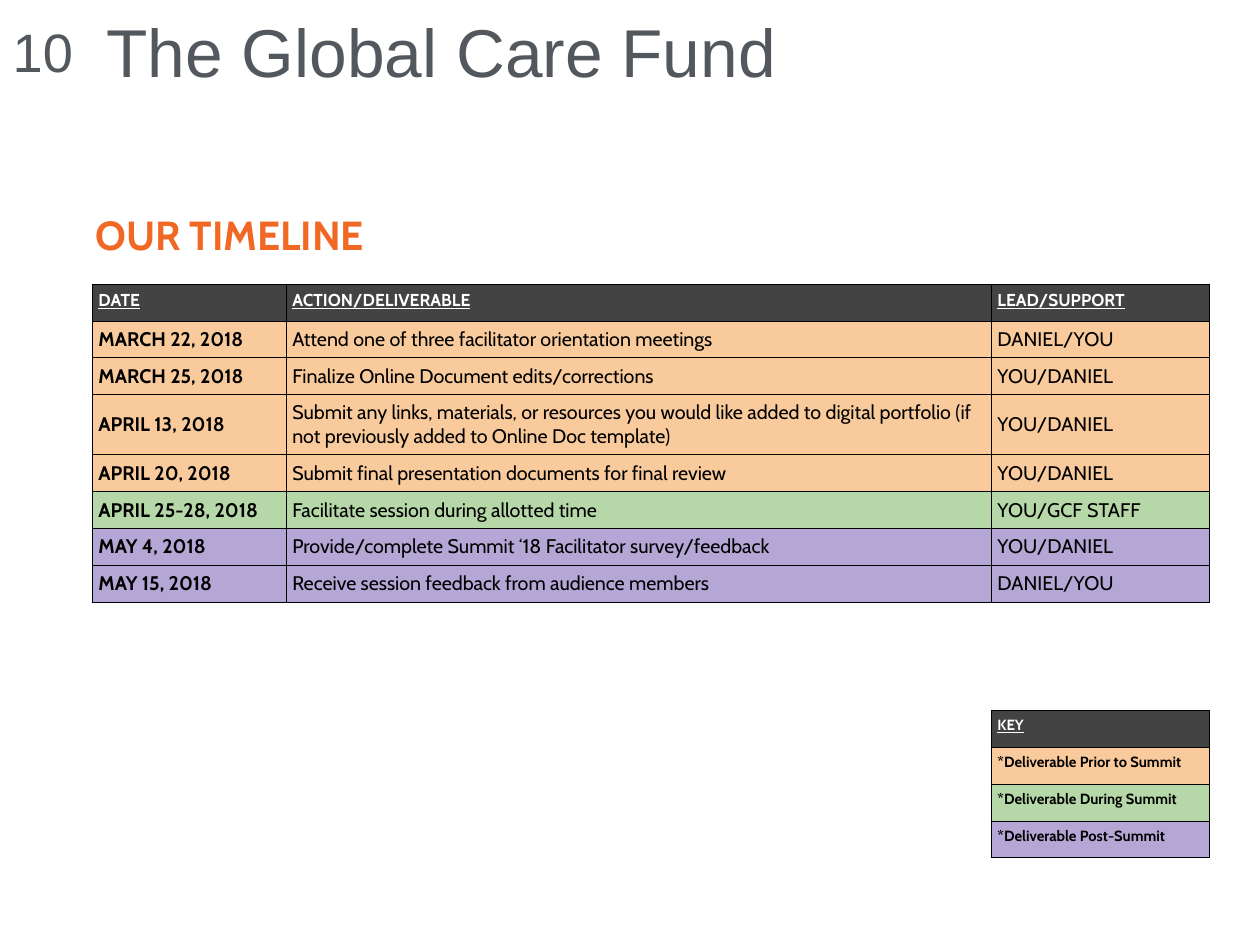
from lxml import etree
from pptx import Presentation
from pptx.dml.color import RGBColor
from pptx.enum.text import MSO_ANCHOR, MSO_AUTO_SIZE, PP_ALIGN
from pptx.oxml.ns import qn
from pptx.util import Inches, Pt

TOP, MIDDLE = MSO_ANCHOR.TOP, MSO_ANCHOR.MIDDLE
LEFT = PP_ALIGN.LEFT
NO_AUTOFIT = MSO_AUTO_SIZE.NONE
TITLE_ONLY_LAYOUT = 5

WHITE = RGBColor(0xFF, 0xFF, 0xFF)
BLACK = RGBColor(0x00, 0x00, 0x00)
SLATE = RGBColor(0x53, 0x58, 0x5F)
ORANGE = RGBColor(0xF1, 0x68, 0x24)
HEADER = RGBColor(0x43, 0x43, 0x43)
BEFORE = RGBColor(0xF9, 0xCB, 0x9C)
DURING = RGBColor(0xB6, 0xD7, 0xA8)
AFTER = RGBColor(0xB4, 0xA7, 0xD6)

# Grid measures: 24 columns and 24 rows to the inch
GRID_STEP = Inches(1) / 24
TABLE_ROW = 10
TIMELINE_LEFT = 25
TIMELINE_COLUMNS = (52.5, 191, 59)

TIMELINE_HEADINGS = ("DATE", "ACTION/DELIVERABLE", "LEAD/SUPPORT")
TIMELINE = (
    (BEFORE, "MARCH 22, 2018",
     "Attend one of three facilitator orientation meetings", "DANIEL/YOU"),
    (BEFORE, "MARCH 25, 2018",
     "Finalize Online Document edits/corrections", "YOU/DANIEL"),
    (BEFORE, "APRIL 13, 2018",
     "Submit any links, materials, or resources you would like added to "
     "digital portfolio (if not previously added to Online Doc template)",
     "YOU/DANIEL"),
    (BEFORE, "APRIL 20, 2018",
     "Submit final presentation documents for final review", "YOU/DANIEL"),
    (DURING, "APRIL 25-28, 2018",
     "Facilitate session during allotted time", "YOU/GCF STAFF"),
    (AFTER, "MAY 4, 2018",
     "Provide/complete Summit ‘18 Facilitator survey/feedback", "YOU/DANIEL"),
    (AFTER, "MAY 15, 2018",
     "Receive session feedback from audience members", "DANIEL/YOU"),
)
KEY = (
    (BEFORE, "*Deliverable Prior to Summit"),
    (DURING, "*Deliverable During Summit"),
    (AFTER, "*Deliverable Post-Summit"),
)


def grid(steps):
    """Turn a number of grid steps into a length."""
    return round(steps * GRID_STEP)


class SlideBuilder:
    display_font = "Arial"
    text_font = "Cabin"
    cell_margin = Inches(0.07)
    border_width = Pt(1)

    def __init__(self, slide):
        self.slide = slide

    def add_text(self, frame, text, size, color, font, bold=False,
                 underline=False):
        """Add one formatted run to the first paragraph and return that paragraph."""
        paragraph = frame.paragraphs[0]
        paragraph.alignment = LEFT
        run = paragraph.add_run()
        run.text = text
        run.font.name = font
        run.font.size = Pt(size)
        run.font.bold = bold
        run.font.underline = underline
        run.font.color.rgb = color
        return paragraph

    def prepare_frame(self, frame, margin, wrap=True):
        frame.auto_size = NO_AUTOFIT
        frame.word_wrap = wrap
        frame.vertical_anchor = MIDDLE
        frame.margin_left = frame.margin_right = Inches(margin)
        frame.margin_top = frame.margin_bottom = Inches(margin)

    def title(self, text, left, top, width, height):
        shape = self.slide.shapes.title
        shape.left, shape.top = grid(left), grid(top)
        shape.width, shape.height = grid(width), grid(height)
        self.prepare_frame(shape.text_frame, 0.1)
        self.add_text(shape.text_frame, text, 55, SLATE, self.display_font)

    def page_number(self, text, *box):
        shape = self.slide.shapes.add_textbox(*map(grid, box))
        self.prepare_frame(shape.text_frame, 0.06, wrap=False)
        self.add_text(shape.text_frame, text, 44, SLATE, self.display_font)

    def heading(self, text, *box):
        shape = self.slide.shapes.add_textbox(*map(grid, box))
        self.prepare_frame(shape.text_frame, 0.1)
        paragraph = self.add_text(shape.text_frame, text, 33, ORANGE,
                                  self.text_font, bold=True)
        paragraph.space_after = Pt(10)

    def table(self, left, top, columns, row_count):
        shape = self.slide.shapes.add_table(
            row_count, len(columns), grid(left), grid(top),
            grid(sum(columns)), grid(TABLE_ROW * row_count))
        table = shape.table
        table.first_row = table.horz_banding = False
        for column, width in zip(table.columns, columns):
            column.width = grid(width)
        for row in table.rows:
            row.height = grid(TABLE_ROW)
        return table

    def cell(self, cell, text, fill, size, color=BLACK, bold=False,
             underline=False, anchor=TOP):
        cell.margin_left = cell.margin_right = self.cell_margin
        cell.margin_top = cell.margin_bottom = self.cell_margin
        cell.vertical_anchor = anchor
        self.border(cell)
        cell.fill.solid()
        cell.fill.fore_color.rgb = fill
        self.add_text(cell.text_frame, text, size, color, self.text_font,
                      bold, underline)

    def header_cell(self, cell, text, size):
        self.cell(cell, text, HEADER, size, WHITE, bold=True, underline=True)

    def border(self, cell):
        properties = cell._tc.get_or_add_tcPr()
        for side in ("a:lnL", "a:lnR", "a:lnT", "a:lnB"):
            line = etree.SubElement(properties, qn(side),
                                    w=str(self.border_width))
            fill = etree.SubElement(line, qn("a:solidFill"))
            etree.SubElement(fill, qn("a:srgbClr"), val=str(BLACK))

    def timeline(self):
        table = self.table(TIMELINE_LEFT, 77, TIMELINE_COLUMNS,
                           len(TIMELINE) + 1)
        for column, text in enumerate(TIMELINE_HEADINGS):
            self.header_cell(table.cell(0, column), text, 14)
        for row, (fill, *texts) in enumerate(TIMELINE, start=1):
            for column, text in enumerate(texts):
                self.cell(table.cell(row, column), text, fill, 16,
                          bold=column == 0, anchor=MIDDLE)

    def key(self):
        """Place the colour key under the last column of the timeline."""
        left = TIMELINE_LEFT + sum(TIMELINE_COLUMNS[:-1])
        table = self.table(left, 192.5, TIMELINE_COLUMNS[-1:], len(KEY) + 1)
        self.header_cell(table.cell(0, 0), "KEY", 12)
        for row, (fill, text) in enumerate(KEY, start=1):
            self.cell(table.cell(row, 0), text, fill, 12, bold=True)


def main():
    presentation = Presentation()
    presentation.slide_width = Inches(14.22)
    presentation.slide_height = Inches(10.67)
    layout = presentation.slide_layouts[TITLE_ONLY_LAYOUT]
    builder = SlideBuilder(presentation.slides.add_slide(layout))
    builder.title("The Global Care Fund", 26.5, -1.5, 291.5, 30.5)
    builder.timeline()
    builder.page_number("10", 2, 4, 19, 19.5)
    builder.heading("OUR TIMELINE", 23.5, 50, 142, 27)
    builder.key()
    presentation.save("out.pptx")


if __name__ == "__main__":
    main()
